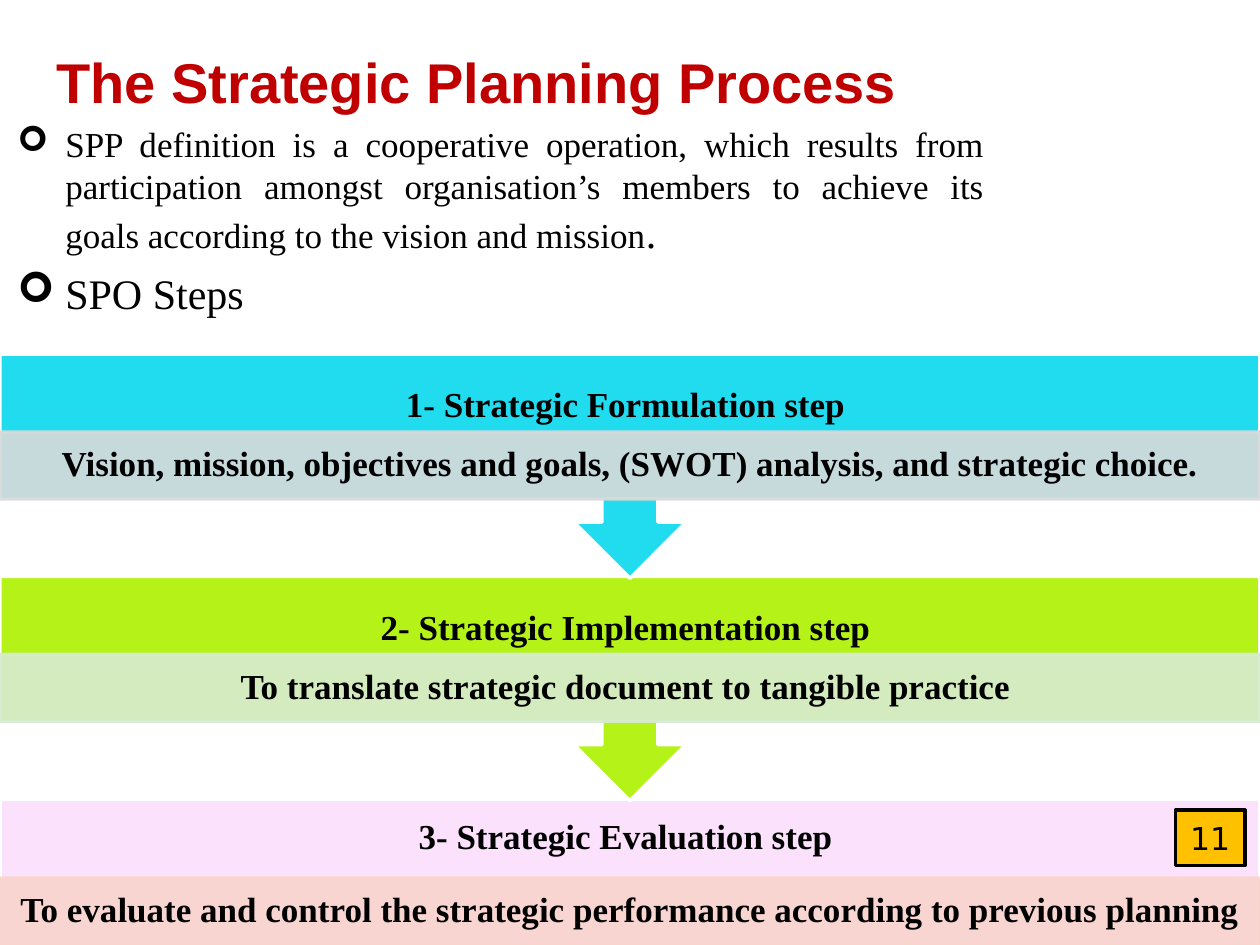
from lxml.etree import SubElement
from pptx import Presentation
from pptx.dml.color import RGBColor
from pptx.enum.shapes import MSO_SHAPE
from pptx.enum.text import MSO_ANCHOR, PP_ALIGN
from pptx.oxml.ns import qn
from pptx.util import Inches, Pt

HUES = {
    "title": "C00000", "ink": "000000", "paper": "FFFFFF", "badge": "FFC000",
    "cyan": "21DBEF", "grey": "D9DADB", "lime": "B4F218", "mint": "D7EBD1",
    "pink": "FBE1FC", "rose": "F8D4CC",
}
STEPS = [
    ("1- Strategic Formulation step ",
     "Vision, mission, objectives and goals, (SWOT) analysis, and strategic choice.",
     "cyan", "grey"),
    ("2- Strategic Implementation step ",
     "To translate strategic document to tangible practice ",
     "lime", "mint"),
    ("3- Strategic Evaluation step ",
     "To evaluate and control the strategic performance according to previous planning",
     "pink", "rose"),
]
POINTS = [
    ([("SPP definition is a cooperative operation, which results from "
       "participation amongst organisation’s members to achieve its goals "
       "according to the vision and mission", 20), (".", 24)], PP_ALIGN.JUSTIFY),
    ([("SPO Steps", 24)], PP_ALIGN.LEFT),
]


def tint(name):
    return RGBColor.from_string(HUES[name])


def apply(item, form):
    for key, value in form.items():
        setattr(item, key, value)


class Deck:
    serif = "Times New Roman"

    def __init__(self):
        self.show = Presentation()
        self.show.slide_width = Inches(10)
        self.show.slide_height = Inches(7.5)
        self.slide = self.show.slides.add_slide(self.show.slide_layouts[6])

    def frame(self, shape, side=0.1, edge=0.05, anchor=MSO_ANCHOR.MIDDLE):
        body = shape.text_frame
        apply(body, {
            "word_wrap": True, "vertical_anchor": anchor,
            "margin_left": Inches(side), "margin_right": Inches(side),
            "margin_top": Inches(edge), "margin_bottom": Inches(edge),
        })
        return body

    def run(self, para, text, size, font=serif, hue="ink", bold=False):
        run = para.add_run()
        run.text = text
        apply(run.font, {"name": font, "size": Pt(size), "bold": bold})
        run.font.color.rgb = tint(hue)

    def label(self, shape, text, size, side=0.1, edge=0.05, gap=1, **form):
        para = self.frame(shape, side, edge).paragraphs[0]
        apply(para, {"alignment": PP_ALIGN.CENTER, "line_spacing": gap})
        self.run(para, text, size, **form)

    def box(self, *place):
        return self.slide.shapes.add_textbox(*map(Inches, place))

    def block(self, kind, place, fill, line, alpha=None):
        shape = self.slide.shapes.add_shape(kind, *map(Inches, place))
        shape.shadow.inherit = False
        shape.fill.solid()
        shape.fill.fore_color.rgb = tint(fill)
        shape.line.color.rgb = tint(line)
        shape.line.width = Pt(2)
        if alpha:
            for node in shape.element.spPr.iter(qn("a:srgbClr")):
                SubElement(node, qn("a:alpha"), val=str(alpha * 1000))
        return shape

    def points(self, place, items):
        body = self.frame(self.box(*place), anchor=MSO_ANCHOR.TOP)
        for index, (runs, align) in enumerate(items):
            para = body.add_paragraph() if index else body.paragraphs[0]
            props = para._p.get_or_add_pPr()
            props.set("marL", str(Inches(0.38)))
            props.set("indent", str(Inches(-0.38)))
            SubElement(props, qn("a:buFont"), typeface="Wingdings")
            SubElement(props, qn("a:buChar"), char="➢")
            apply(para, {"alignment": align, "space_before": Pt(6 if index else 0)})
            for text, size in runs:
                self.run(para, text, size)

    def step(self, top, head, note, fill, pale, last):
        kind = MSO_SHAPE.RECTANGLE if last else MSO_SHAPE.DOWN_ARROW_CALLOUT
        start, tall = (top, 1.16) if last else (top + 0.21, 0.41)
        self.block(kind, (0, top, 10, 1.16 if last else 1.78), fill, "paper")
        form = {"size": 20, "side": 0.16, "edge": 0.03, "gap": 0.9, "bold": True}
        high = 0.63 if last else tall
        self.label(self.box(0, start, 10, high), head, **form)
        bar = self.block(MSO_SHAPE.RECTANGLE, (0, start + high, 10, 0.53), pale, pale, 90)
        self.label(bar, note, **form)


def main():
    deck = Deck()
    deck.label(deck.box(0.2, 0.29, 7.17, 0.71), "The Strategic Planning Process", 32,
               font="Arial", hue="title", bold=True)
    deck.points((0.04, 0.92, 7.87, 7.09), POINTS)
    final = len(STEPS) - 1
    for index in range(final, -1, -1):
        deck.step(2.81 + 1.765 * index, *STEPS[index], index == final)
    badge = deck.block(MSO_SHAPE.RECTANGLE, (9.33, 6.43, 0.55, 0.44), "badge", "ink")
    deck.label(badge, "11", 18, font="DejaVu Sans")
    deck.show.save("out.pptx")


if __name__ == "__main__":
    main()
